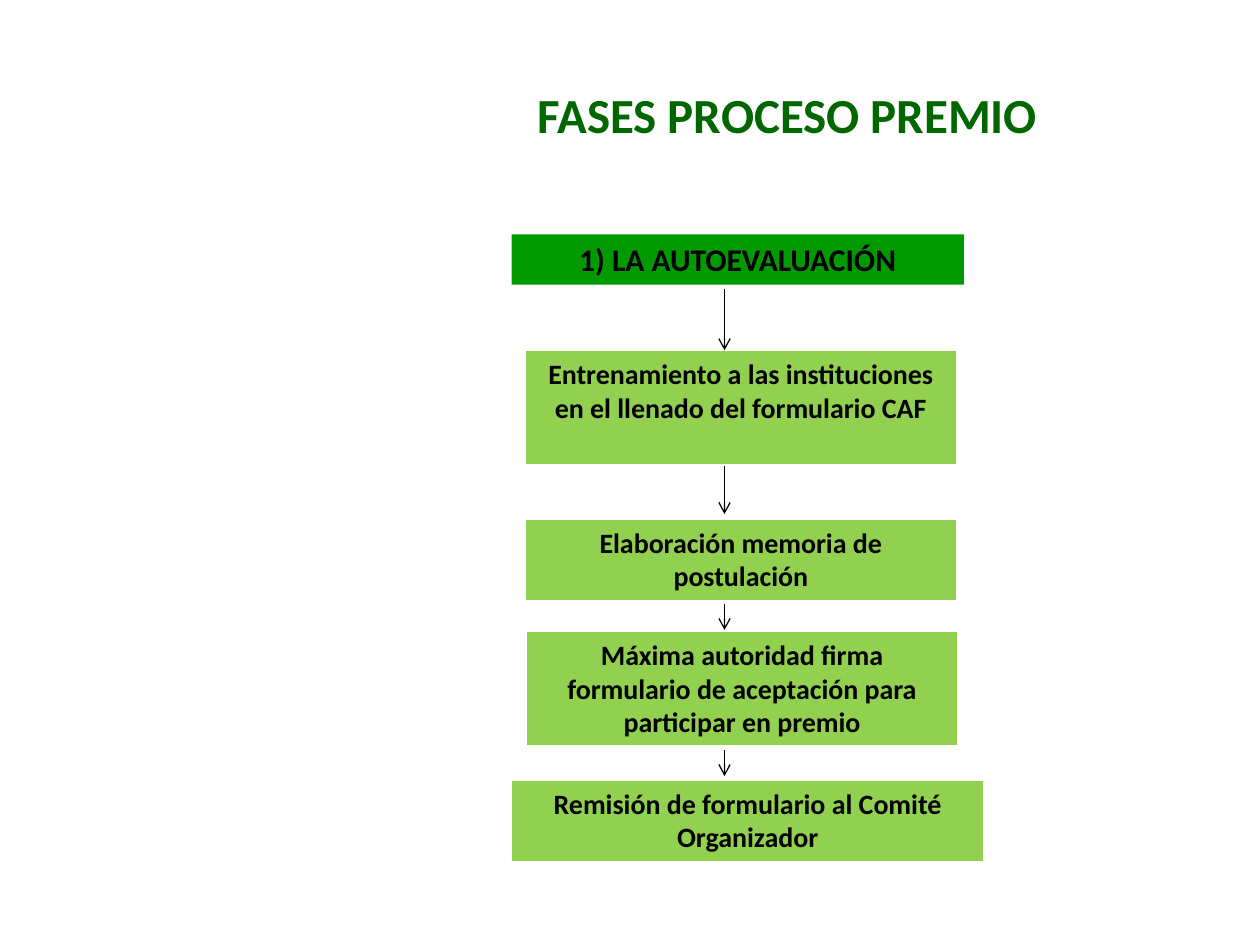
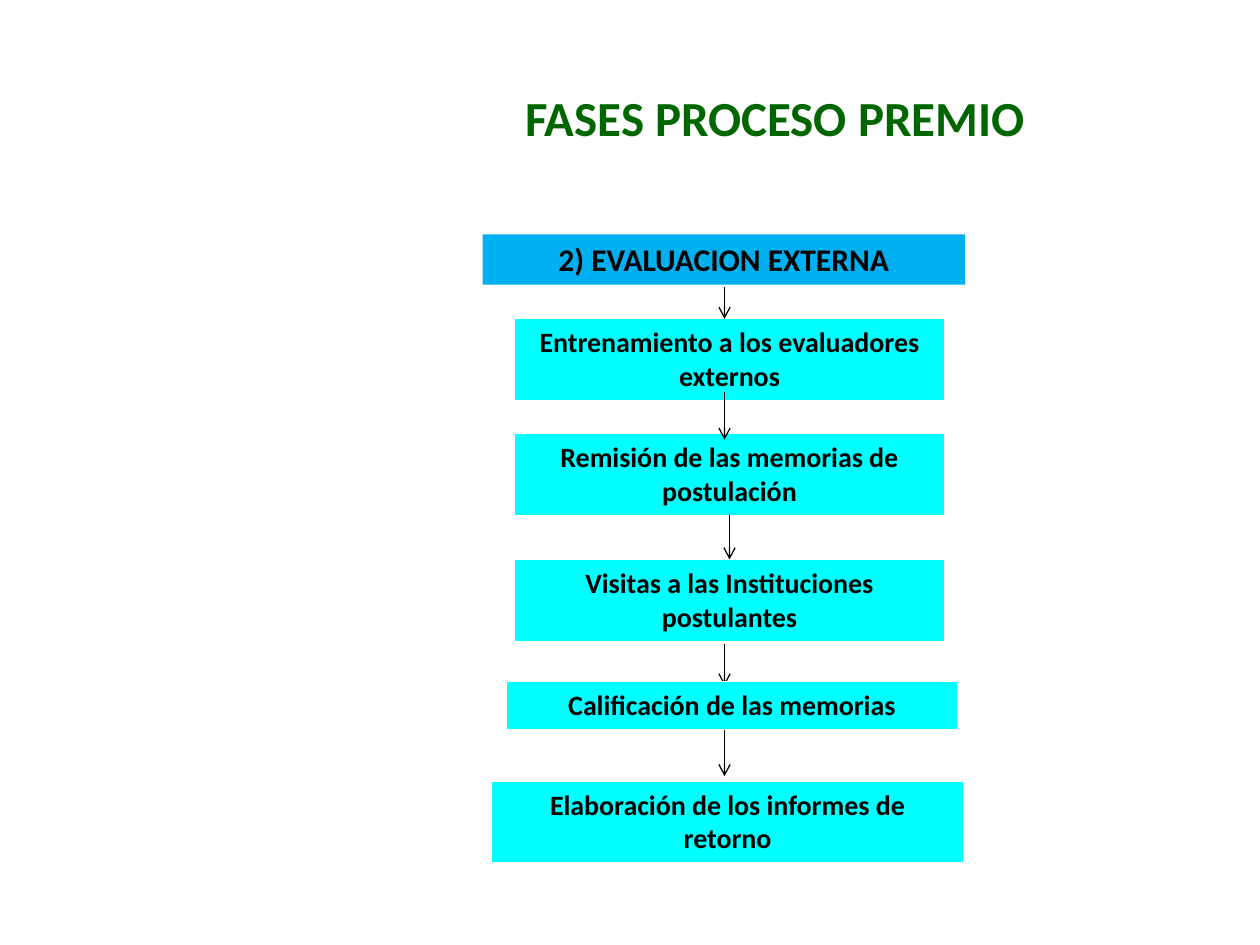
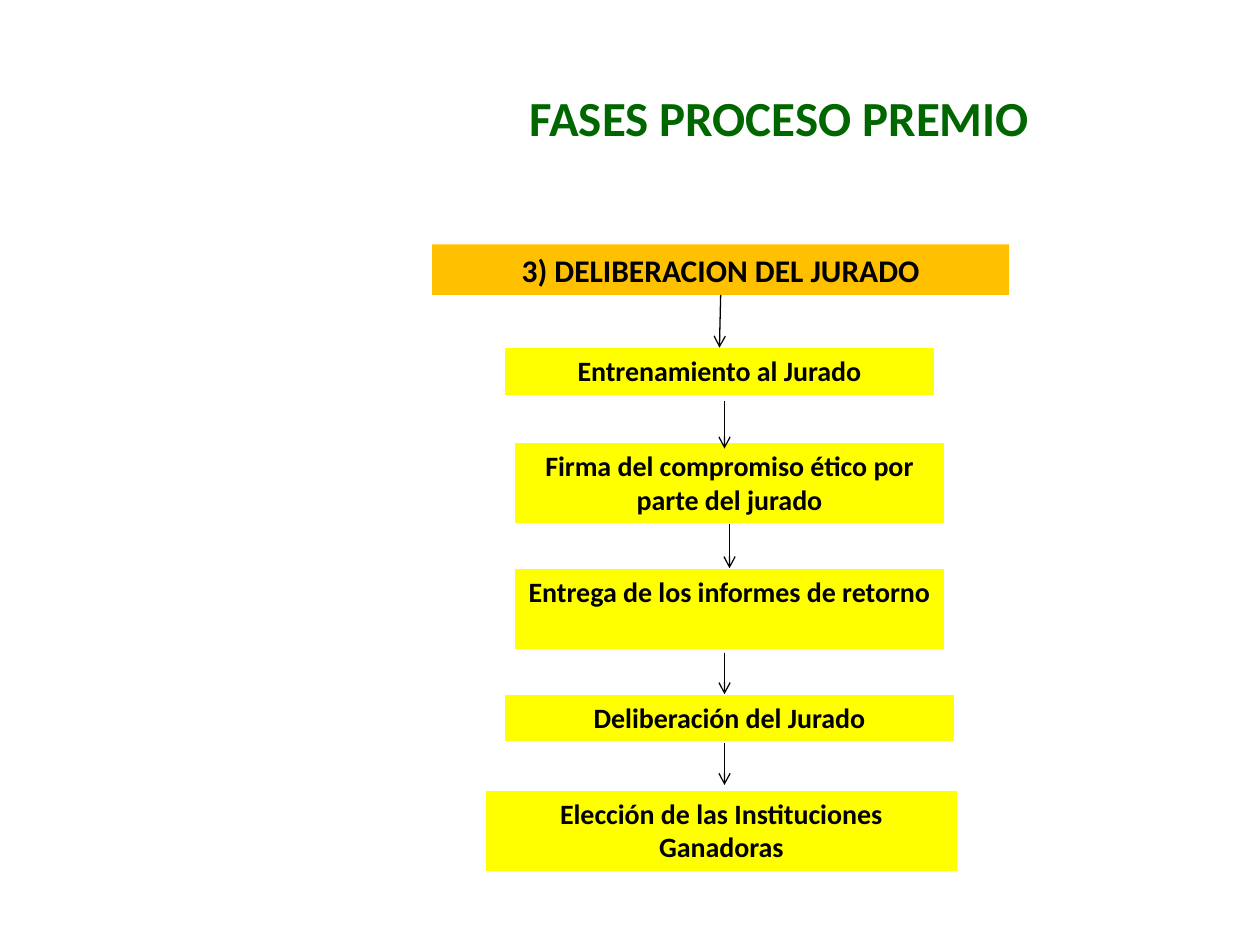
from dataclasses import dataclass

from lxml import etree
from pptx import Presentation
from pptx import util as u
from pptx.dml.color import RGBColor
from pptx.enum import shapes, text
from pptx.oxml.ns import qn

FONT = "Calibri"
BLACK = RGBColor(0x00, 0x00, 0x00)
WHITE = RGBColor(0xFF, 0xFF, 0xFF)
TITLE_GREEN = RGBColor(0x00, 0x66, 0x00)
GREEN = RGBColor(0x00, 0x99, 0x00)
LIME = RGBColor(0x92, 0xD0, 0x50)
BLUE = RGBColor(0x00, 0xB0, 0xF0)
CYAN = RGBColor(0x00, 0xFF, 0xFF)
ORANGE = RGBColor(0xFF, 0xC0, 0x00)
YELLOW = RGBColor(0xFF, 0xFF, 0x00)

TITLE = "FASES PROCESO PREMIO"
HEADER_HEIGHT = 0.4
STEP_HEIGHTS = {1: 0.38, 2: 0.65, 3: 0.91}
ARROW_X = 5.75
TOP, BOTTOM = 0, 2


@dataclass
class Step:
    """A box of the flow; its height follows from its number of lines."""
    text: str
    left: float
    top: float
    lines: int = 2
    width: float = 3.42


@dataclass
class Phase:
    """One slide; an arrow of None joins the two boxes around it."""
    title_box: tuple
    header: str
    header_box: tuple
    header_fill: RGBColor
    step_fill: RGBColor
    steps: list
    arrows: list


PHASES = [
    Phase((2.75, 0.28, 7), "1) LA AUTOEVALUACIÓN", (4.06, 1.86, 3.59), GREEN, LIME,
          [Step("Entrenamiento a las instituciones en el llenado del formulario CAF",
                4.17, 2.78, lines=3),
           Step("Elaboración memoria de postulación", 4.17, 4.12),
           Step("Máxima autoridad firma formulario de aceptación para participar en premio",
                4.18, 5.01, lines=3),
           Step("Remisión de formulario al Comité Organizador", 4.06, 6.19, width=3.75)],
          [(2.29, 2.78), (3.7, 4.08), (4.79, 5), (5.95, 6.16)]),
    Phase((2.8, 0.3, 6.7), "2) EVALUACION EXTERNA", (3.83, 1.86, 3.83), BLUE, CYAN,
          [Step("Entrenamiento a los evaluadores externos", 4.08, 2.53),
           Step("Remisión de las memorias de postulación", 4.08, 3.44),
           Step("Visitas a las Instituciones postulantes", 4.08, 4.44),
           Step("Calificación de las memorias", 4.02, 5.41, lines=1, width=3.58),
           Step("Elaboración de los informes de retorno", 3.9, 6.2, width=3.75)],
          [(2.28, 2.53), (3.11, 3.49), None, (5.11, 5.44), (5.78, 6.16)]),
    Phase((2.87, 0.3, 6.63), "3) DELIBERACION DEL JURADO", (3.43, 1.94, 4.58), ORANGE, YELLOW,
          [Step("Entrenamiento al Jurado", 4, 2.76, lines=1),
           Step("Firma del compromiso ético por parte del jurado", 4.08, 3.51),
           Step("Entrega de los informes de retorno", 4.08, 4.51),
           Step("Deliberación del Jurado", 4, 5.51, lines=1, width=3.58),
           Step("Elección de las Instituciones Ganadoras", 3.85, 6.27, width=3.75)],
          [None, (3.18, 3.56), None, (5.18, 5.51), (5.85, 6.23)]),
]


def write(sp, content, size, color, anchor):
    """Put centred bold text into a shape."""
    tf = sp.text_frame
    tf.word_wrap = True
    tf.vertical_anchor = anchor
    tf.text = content
    p = tf.paragraphs[0]
    p.alignment = text.PP_ALIGN.CENTER
    font = p.runs[0].font
    font.name, font.size, font.bold = FONT, u.Pt(size), True
    font.color.rgb = color


def add_title(s, left, top, width):
    """Add the slide title."""
    sp = s.shapes.add_textbox(u.Inches(left), u.Inches(top), u.Inches(width), u.Inches(1.25))
    write(sp, TITLE, 28, TITLE_GREEN, text.MSO_ANCHOR.MIDDLE)


def add_box(s, content, left, top, width, height, fill, size, line=None):
    """Add a filled rectangle with text and return it."""
    sp = s.shapes.add_shape(shapes.MSO_SHAPE.RECTANGLE, u.Inches(left), u.Inches(top),
                            u.Inches(width), u.Inches(height))
    sp.shadow.inherit = False
    sp.fill.solid()
    sp.fill.fore_color.rgb = fill
    if line is None:
        sp.line.fill.background()
    else:
        sp.line.color.rgb = line
        sp.line.width = u.Pt(0.75)
    write(sp, content, size, BLACK, text.MSO_ANCHOR.TOP)
    return sp


def add_step(s, step, fill):
    """Add one step of the flow and return its box."""
    return add_box(s, step.text, step.left, step.top, step.width,
                   STEP_HEIGHTS[step.lines], fill, 16, WHITE)


def add_arrow(s, top=0, bottom=0):
    """Add a thin downward arrow and return it."""
    cxn = s.shapes.add_connector(shapes.MSO_CONNECTOR.STRAIGHT, u.Inches(ARROW_X),
                                 u.Inches(top), u.Inches(ARROW_X), u.Inches(bottom))
    cxn.line.color.rgb = BLACK
    cxn.line.width = u.Pt(0.75)
    etree.SubElement(cxn.line._get_or_add_ln(), qn("a:tailEnd"), type="arrow")
    etree.SubElement(cxn._element.spPr, qn("a:effectLst"))
    return cxn


def join(s, upper, lower):
    """Join two boxes with an arrow."""
    cxn = add_arrow(s)
    cxn.begin_connect(upper, BOTTOM)
    cxn.end_connect(lower, TOP)


def add_phase(s, phase):
    """Draw one phase, with its fourth step above the arrows."""
    add_title(s, *phase.title_box)
    boxes = [add_box(s, phase.header, *phase.header_box, HEADER_HEIGHT, phase.header_fill, 18)]
    boxes += [add_step(s, step, phase.step_fill) for step in phase.steps[:3]]
    for step in phase.steps[4:]:
        add_step(s, step, phase.step_fill)
    for i, arrow in enumerate(phase.arrows):
        if arrow is None:
            join(s, boxes[i], boxes[i + 1])
        else:
            add_arrow(s, *arrow)
    add_step(s, phase.steps[3], phase.step_fill)


def main():
    """Build the presentation."""
    prs = Presentation()
    prs.slide_width, prs.slide_height = u.Inches(10), u.Inches(7.5)
    for phase in PHASES:
        add_phase(prs.slides.add_slide(prs.slide_layouts[6]), phase)
    prs.save("out.pptx")


if __name__ == "__main__":
    main()
